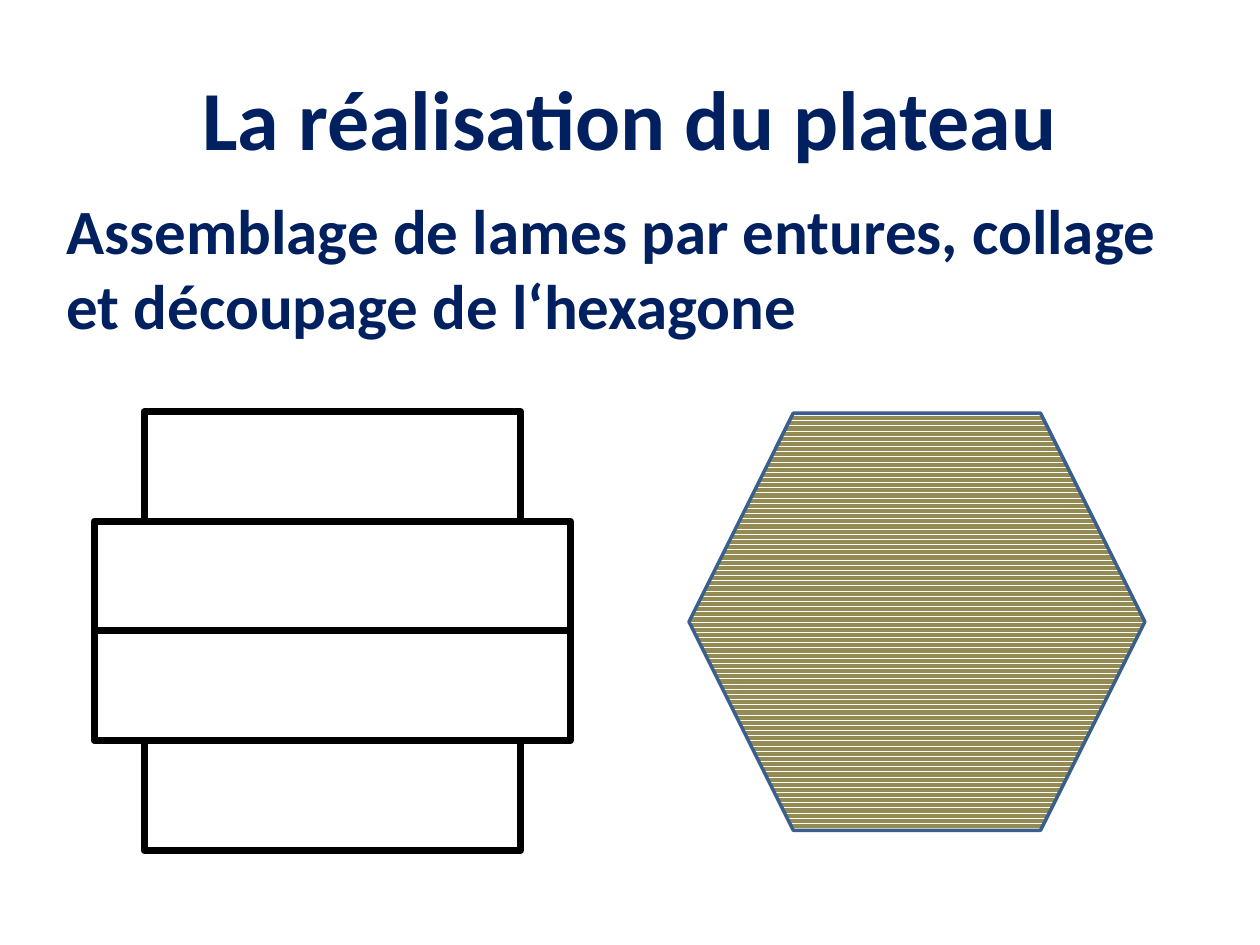
"""Build the slide on making the hexagonal table top from joined boards."""
import pptx
import pptx.dml.color
import pptx.enum.dml
import pptx.enum.shapes
import pptx.enum.text
import pptx.util

Cm = pptx.util.Cm
Pt = pptx.util.Pt
SHAPES = pptx.enum.shapes.MSO_SHAPE
ALIGN = pptx.enum.text.PP_ALIGN
ANCHOR = pptx.enum.text.MSO_ANCHOR

COLOURS = {"text": "002060", "board": "000000", "edge": "3A5F8C",
           "grain": "948A54", "gap": "FFFFFF"}
FONT = "Calibri"

TEXTS = [
    ("La réalisation du plateau", (1.27, 0.76, 22.86, 3.18), 48, ALIGN.CENTER, ANCHOR.MIDDLE),
    ("Assemblage de lames par entures, collage et découpage de l‘hexagone",
     (1.09, 3.73, 22.86, 12.57), 36, ALIGN.LEFT, ANCHOR.TOP),
]
BOARD_WIDTHS = [7.59, 9.6, 9.6, 7.59]
BOARD_HEIGHT = 2.21
BOARDS_CENTRE = 6.7
BOARDS_TOP = 8.3
HEXAGON = (13.89, 8.33, 9.19, 8.41)


def colour(name):
    return pptx.dml.color.RGBColor.from_string(COLOURS[name])


def add_text(slide, wording, place, size, align, anchor):
    frame = slide.shapes.add_textbox(*map(Cm, place)).text_frame
    frame.word_wrap = True
    frame.vertical_anchor = anchor
    paragraph = frame.paragraphs[0]
    paragraph.alignment = align
    run = paragraph.add_run()
    run.text = wording
    run.font.name = FONT
    run.font.size = Pt(size)
    run.font.bold = True
    run.font.color.rgb = colour("text")


def add_outlined(shapes, preset, place, line_colour, line_width):
    outlined = shapes.add_shape(preset, *map(Cm, place))
    outlined.shadow.inherit = False
    outlined.fill.background()
    outlined.line.color.rgb = colour(line_colour)
    outlined.line.width = Pt(line_width)
    return outlined


def main():
    deck = pptx.Presentation()
    deck.slide_width, deck.slide_height = Cm(25.4), Cm(19.05)
    slide = deck.slides.add_slide(deck.slide_layouts[6])

    for text in TEXTS:
        add_text(slide, *text)

    boards = slide.shapes.add_group_shape()
    for row, width in reversed(list(enumerate(BOARD_WIDTHS))):
        place = (BOARDS_CENTRE - width / 2, BOARDS_TOP + row * BOARD_HEIGHT, width, BOARD_HEIGHT)
        add_outlined(boards.shapes, SHAPES.RECTANGLE, place, "board", 4)

    hexagon = add_outlined(slide.shapes, SHAPES.HEXAGON, HEXAGON, "edge", 2)
    hexagon.fill.patterned()
    hexagon.fill.pattern = pptx.enum.dml.MSO_PATTERN.DARK_HORIZONTAL
    hexagon.fill.fore_color.rgb = colour("grain")
    hexagon.fill.back_color.rgb = colour("gap")

    deck.save("out.pptx")


if __name__ == "__main__":
    main()
